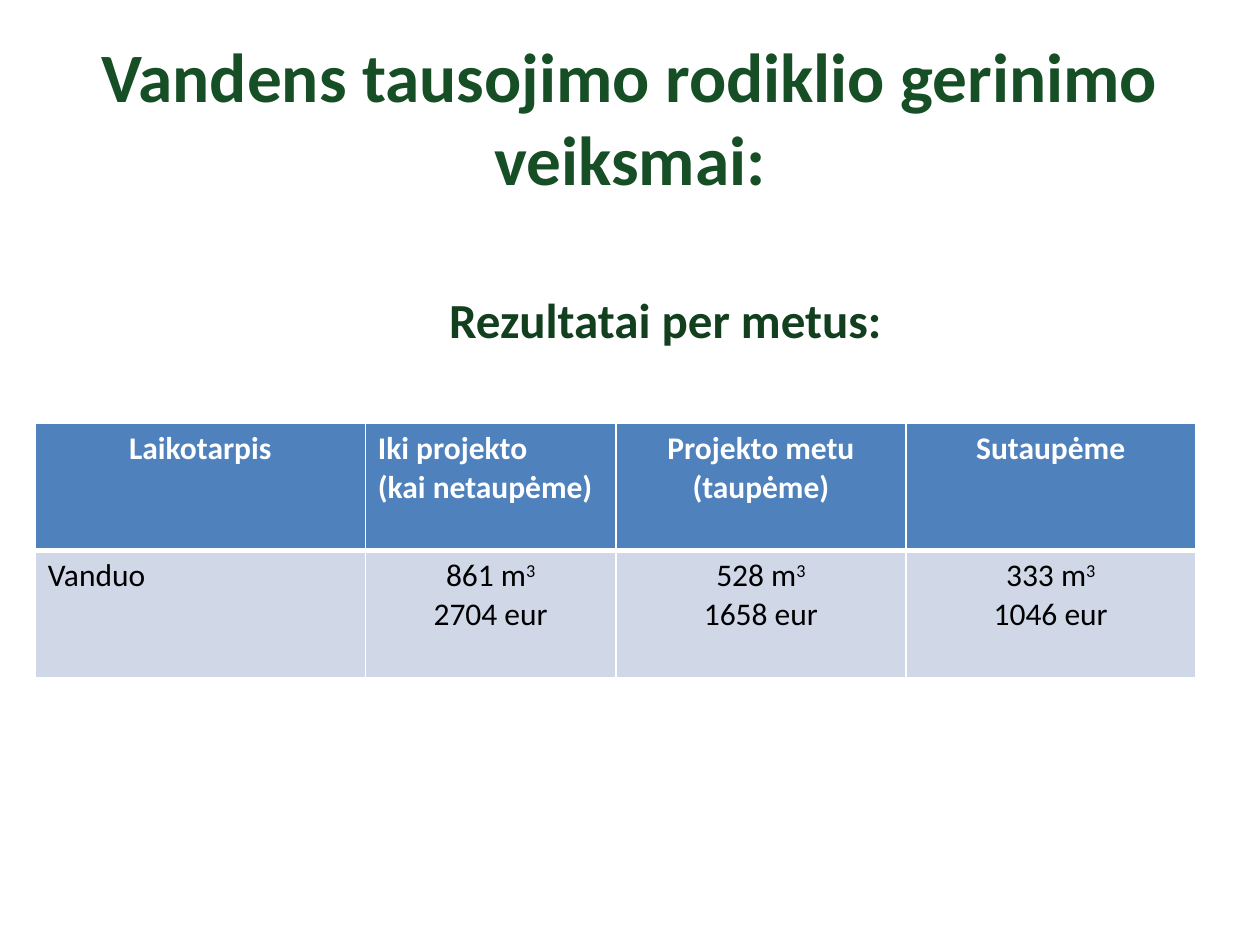
from lxml.etree import SubElement
from pptx import Presentation
from pptx.dml.color import RGBColor
from pptx.enum.text import MSO_ANCHOR as Anchor, PP_ALIGN as Align
from pptx.oxml.ns import qn
from pptx.util import Inches, Pt

COLUMN_WIDTHS = (2.62, 1.99, 2.3, 2.3)
ROW_HEIGHT = 1.01
HEADER = (
    ("Laikotarpis", Align.CENTER),
    ("Iki projekto\n(kai netaupėme)", Align.LEFT),
    ("Projekto metu (taupėme)", Align.CENTER),
    ("Sutaupėme", Align.CENTER),
)
WATER = (
    ("Vanduo", Align.LEFT),
    ("861 m^3\n2704 eur", Align.CENTER),
    ("528 m^3\n1658 eur", Align.CENTER),
    ("333 m^3\n1046 eur", Align.CENTER),
)


def color(hex_code):
    return RGBColor.from_string(hex_code)


def write(frame, text, size=18, ink="000000", bold=False, align=Align.CENTER):
    """Write one paragraph per line; what follows ^ is superscript."""
    frame.word_wrap = True
    for index, line in enumerate(text.split("\n")):
        paragraph = frame.paragraphs[0] if index == 0 else frame.add_paragraph()
        paragraph.alignment = align
        base, _, power = line.partition("^")
        for part in filter(None, (base, power)):
            run = paragraph.add_run()
            run.text = part
            font = run.font
            font.name, font.size, font.bold = "Calibri", Pt(size), bold
            font.color.rgb = color(ink)
        if power:
            run._r.get_or_add_rPr().set("baseline", "30000")


def add_heading(slide, text, box, anchor=Anchor.TOP, **text_format):
    frame = slide.shapes.add_textbox(*map(Inches, box)).text_frame
    frame.vertical_anchor = anchor
    write(frame, text, bold=True, **text_format)


def set_borders(cell, top=1, bottom=1):
    properties = cell._tc.get_or_add_tcPr()
    for side, width in (("L", 1), ("R", 1), ("T", top), ("B", bottom)):
        line = SubElement(properties, qn(f"a:ln{side}"), w=str(Pt(width)))
        fill = SubElement(line, qn("a:solidFill"))
        SubElement(fill, qn("a:srgbClr"), val="FFFFFF")


def fill_row(table, row, entries, fill, borders, **text_format):
    table.rows[row].height = Inches(ROW_HEIGHT)
    for column, (text, align) in enumerate(entries):
        cell = table.cell(row, column)
        set_borders(cell, **borders)
        cell.fill.solid()
        cell.fill.fore_color.rgb = color(fill)
        write(cell.text_frame, text, align=align, **text_format)


def add_savings_table(slide, left, top):
    size = (sum(COLUMN_WIDTHS), 2 * ROW_HEIGHT)
    table = slide.shapes.add_table(
        2, len(COLUMN_WIDTHS), *map(Inches, (left, top, *size))).table
    for column, width in zip(table.columns, COLUMN_WIDTHS):
        column.width = Inches(width)
    fill_row(table, 0, HEADER, "4F81BD", {"bottom": 3}, ink="FFFFFF", bold=True)
    fill_row(table, 1, WATER, "D0D8E8", {"top": 3})


def main():
    deck = Presentation()
    deck.slide_width, deck.slide_height = Inches(10), Inches(7.5)
    slide = deck.slides.add_slide(deck.slide_layouts[6])
    add_heading(slide, "Vandens tausojimo rodiklio gerinimo veiksmai:",
                (0.5, 0.3, 9, 1.25), Anchor.MIDDLE, size=39.6, ink="164E25")
    add_heading(slide, "Rezultatai per metus:",
                (3.35, 2.25, 3.86, 0.79), size=28, ink="123F1E")
    add_savings_table(slide, 0.28, 3.36)
    deck.save("out.pptx")


if __name__ == "__main__":
    main()
